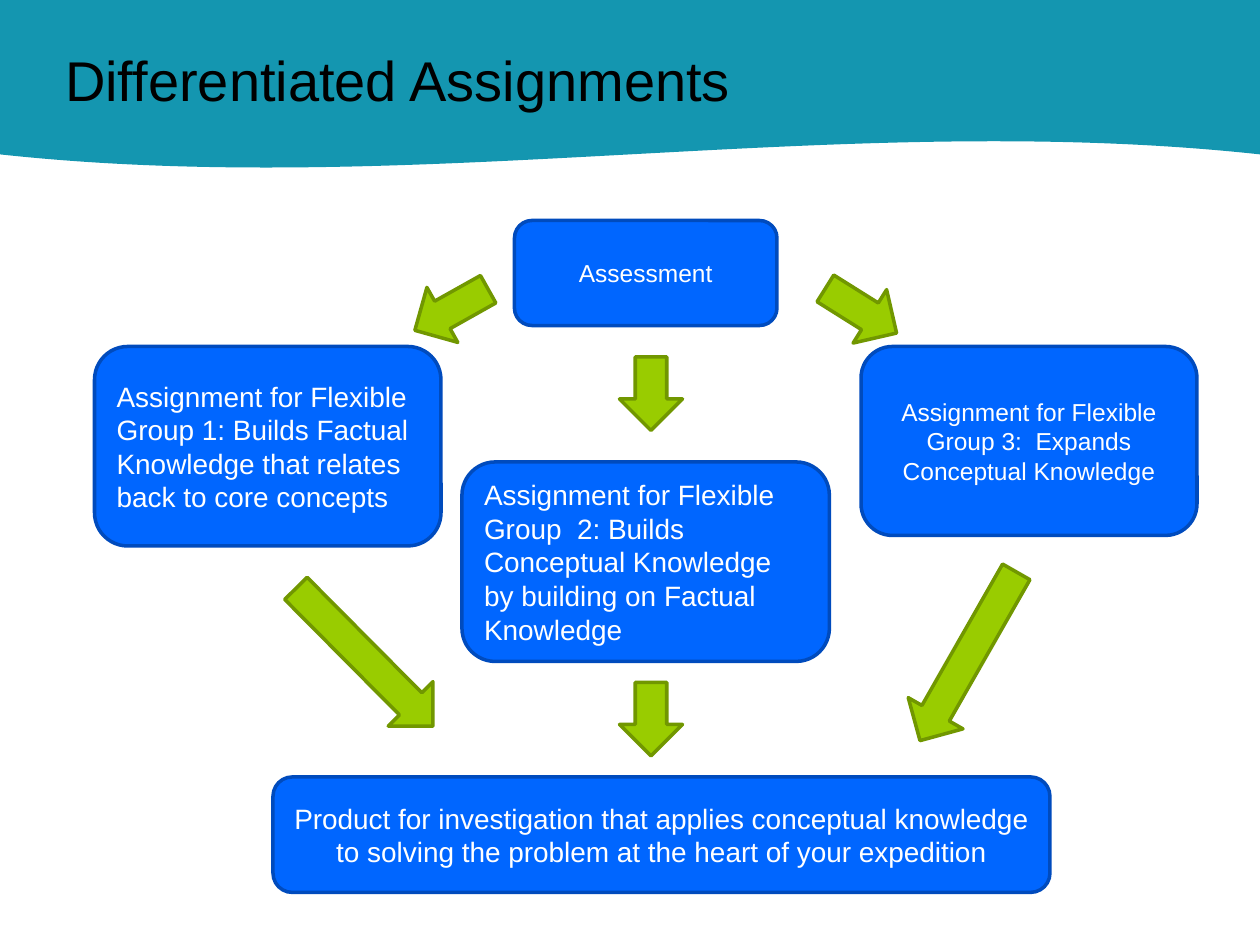
from dataclasses import dataclass
from pptx import Presentation
from pptx import util as u
from pptx.dml.color import RGBColor
from pptx.enum import shapes, text

COLUMNS, ROWS = 120, 90
WIDTH, HEIGHT = u.Inches(10), u.Inches(7.5)
LEFT, CENTER = text.PP_ALIGN.LEFT, text.PP_ALIGN.CENTER


@dataclass(frozen=True)
class Theme:
    font: str = "Arial"
    banner: str = "1496B0"
    heading: str = "000000"
    step: str = "0066FF"
    step_edge: str = "004BBD"
    step_text: str = "FFFFFF"
    flow: str = "99CC00"
    flow_edge: str = "719700"
    edge_width: float = 2
    heading_size: float = 32
    large: float = 16
    small: float = 14


THEME = Theme()


def place(box):
    left, top, width, height = box
    return (round(left * WIDTH / COLUMNS), round(top * HEIGHT / ROWS),
            round(width * WIDTH / COLUMNS), round(height * HEIGHT / ROWS))


def paint(shape, fill, edge=None):
    shape.shadow.inherit = False
    shape.fill.solid()
    shape.fill.fore_color.rgb = RGBColor.from_string(fill)
    if edge:
        shape.line.color.rgb = RGBColor.from_string(edge)
        shape.line.width = u.Pt(THEME.edge_width)
    else:
        shape.line.fill.background()


def write(frame, wording, size, color, align):
    frame.word_wrap = True
    frame.auto_size = text.MSO_AUTO_SIZE.NONE
    frame.vertical_anchor = text.MSO_ANCHOR.MIDDLE
    paragraph = frame.paragraphs[0]
    paragraph.alignment = align
    run = paragraph.add_run()
    run.text = wording
    run.font.name = THEME.font
    run.font.size = u.Pt(size)
    run.font.color.rgb = RGBColor.from_string(color)


def add_banner(slide, box):
    wave = slide.shapes.add_shape(shapes.MSO_SHAPE.WAVE, *place(box))
    wave.adjustments[0], wave.adjustments[1] = 0.065, 0
    wave.rotation = 180
    wave.element.spPr.get_or_add_xfrm().set("flipH", "1")
    paint(wave, THEME.banner)
    slide.shapes.element.insert(2, wave.element)


def add_heading(slide, box, wording):
    heading = slide.shapes.title
    heading.left, heading.top, heading.width, heading.height = place(box)
    frame = heading.text_frame
    frame.margin_left = frame.margin_right = u.Inches(0.1)
    frame.margin_top = frame.margin_bottom = u.Inches(0.1)
    write(frame, wording, THEME.heading_size, THEME.heading, LEFT)


def add_step(slide, box, wording, size, align):
    step = slide.shapes.add_shape(shapes.MSO_SHAPE.ROUNDED_RECTANGLE, *place(box))
    paint(step, THEME.step, THEME.step_edge)
    write(step.text_frame, wording, size, THEME.step_text, align)


def add_flow(slide, center, length, angle, thickness=6):
    column, row = center
    box = (column - length / 2, row - thickness / 2, length, thickness)
    flow = slide.shapes.add_shape(shapes.MSO_SHAPE.RIGHT_ARROW, *place(box))
    flow.rotation = angle
    paint(flow, THEME.flow, THEME.flow_edge)


def add_assignment_flow(slide):
    steps = [
        ((49, 21, 25, 10), "Assessment", THEME.small, CENTER),
        ((82, 33, 32, 18),
         "Assignment for Flexible Group 3:  Expands Conceptual Knowledge",
         THEME.small, CENTER),
        ((44, 44, 35, 19),
         "Assignment for Flexible Group  2: Builds Conceptual Knowledge "
         "by building on Factual Knowledge", THEME.large, LEFT),
        ((9, 33, 33, 19),
         "Assignment for Flexible Group 1: Builds Factual Knowledge "
         "that relates back to core concepts", THEME.large, LEFT),
        ((26, 74, 74, 11),
         "Product for investigation that applies conceptual knowledge "
         "to solving the problem at the heart of your expedition",
         THEME.large, CENTER),
    ]
    flows = [
        ((62, 37.5), 7, 90),
        ((43, 29.5), 8, 150.7),
        ((82, 29.6), 8, 32.1),
        ((34.7, 62.6), 18.5, 45.2),
        ((92.2, 62.5), 18.5, 119.7),
        ((62, 68.5), 7, 90),
    ]
    for step in steps:
        add_step(slide, *step)
    for flow in flows:
        add_flow(slide, *flow)


def main():
    deck = Presentation()
    deck.slide_width, deck.slide_height = WIDTH, HEIGHT
    slide = deck.slides.add_slide(deck.slide_layouts.get_by_name("Title Only"))
    add_banner(slide, (0, -4, COLUMNS, 20))
    add_heading(slide, (5, 0.5, 108, 14), "Differentiated Assignments")
    add_assignment_flow(slide)
    deck.save("out.pptx")


if __name__ == "__main__":
    main()
